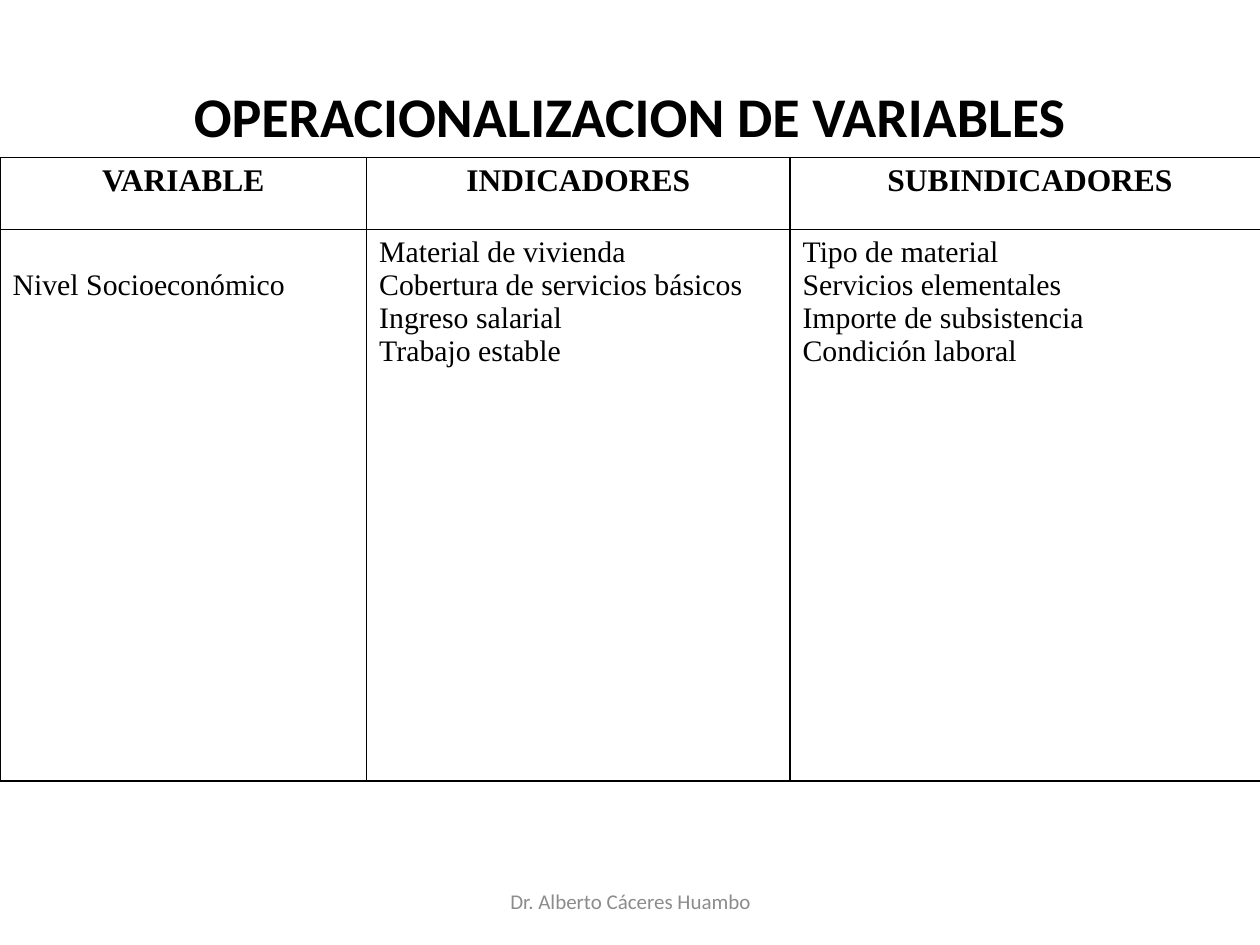
from lxml import etree
from pptx import Presentation
from pptx.dml.color import RGBColor
from pptx.enum import text
from pptx.oxml import ns
from pptx.util import Inches, Pt

BLACK = RGBColor(0, 0, 0)
GREY = RGBColor(0x8C, 0x8C, 0x8C)
SANS, SERIF = "Calibri", "Times New Roman"
CENTER, LEFT = text.PP_ALIGN.CENTER, text.PP_ALIGN.LEFT

HEADERS = ["VARIABLE", "INDICADORES", "SUBINDICADORES"]
COLUMNS = [
    ["Nivel Socioeconómico"],
    ["Material de vivienda", "Cobertura de servicios básicos",
     "Ingreso salarial", "Trabajo estable"],
    ["Tipo de material", "Servicios elementales",
     "Importe de subsistencia", "Condición laboral"],
]
COL_WIDTHS = [2.91, 3.36, 3.81]
ROW_HEIGHTS = [0.57, 4.38]
INDENTS = [0.38, 0.07, 0.38]
LINE_HEIGHT = 0.26


class SlideBuilder:
    def __init__(self, prs, layout):
        self.s = prs.slides.add_slide(prs.slide_layouts[layout])

    def fill_text(self, tf, lines, size, font, color=BLACK, bold=False,
                  align=CENTER, indent=0):
        tf.text = "\n".join(lines)
        for p in tf.paragraphs:
            p.alignment = align
            if indent:
                pPr = p._p.get_or_add_pPr()
                pPr.set("marL", str(Inches(indent)))
                pPr.set("indent", str(-Inches(indent)))
            for r in p.runs:
                r.font.size, r.font.name, r.font.bold = Pt(size), font, bold
                r.font.color.rgb = color

    def title(self, line, x, y, w, h):
        sp = self.s.shapes.title
        sp.left, sp.top, sp.width, sp.height = map(Inches, (x, y, w, h))
        sp.text_frame.vertical_anchor = text.MSO_ANCHOR.MIDDLE
        self.fill_text(sp.text_frame, [line], 32, SANS, bold=True)

    def footer(self, line, x, y, w, h):
        tf = self.s.shapes.add_textbox(*map(Inches, (x, y, w, h))).text_frame
        tf.word_wrap = True
        tf.vertical_anchor = text.MSO_ANCHOR.MIDDLE
        self.fill_text(tf, [line], 12, SANS, GREY)

    def border(self, cell):
        """Draw a thin black line on all four sides of an unfilled cell."""
        cell.fill.background()
        tcPr = cell._tc.get_or_add_tcPr()
        for i, side in enumerate(("lnL", "lnR", "lnT", "lnB")):
            ln = etree.Element(ns.qn(f"a:{side}"), w=str(Pt(1)))
            fill = etree.SubElement(ln, ns.qn("a:solidFill"))
            etree.SubElement(fill, ns.qn("a:srgbClr"), val=str(BLACK))
            tcPr.insert(i, ln)

    def table(self, x, y):
        size = sum(COL_WIDTHS), sum(ROW_HEIGHTS)
        table = self.s.shapes.add_table(
            len(ROW_HEIGHTS), len(COL_WIDTHS), *map(Inches, (x, y, *size))).table
        table.first_row = table.horz_banding = False
        for row, height in zip(table.rows, ROW_HEIGHTS):
            row.height = Inches(height)
        for i, (header, lines) in enumerate(zip(HEADERS, COLUMNS)):
            table.columns[i].width = Inches(COL_WIDTHS[i])
            head, body = table.cell(0, i), table.cell(1, i)
            self.fill_text(head.text_frame, [header], 18, SERIF, bold=True,
                           indent=0.38)
            self.fill_text(body.text_frame, lines, 17, SERIF, align=LEFT,
                           indent=INDENTS[i])
            self.border(head)
            self.border(body)
        # The variable name starts level with the second line of its neighbours.
        table.cell(1, 0).margin_top = Inches(0.05 + LINE_HEIGHT)


def main():
    prs = Presentation()
    prs.slide_width, prs.slide_height = Inches(10), Inches(7.5)
    b = SlideBuilder(prs, 5)
    b.footer("Dr. Alberto Cáceres Huambo", 3.42, 6.95, 3.17, 0.4)
    b.title("OPERACIONALIZACION DE VARIABLES", 0.5, 0.36, 9, 1.11)
    b.table(0, 1.25)
    prs.save("out.pptx")


if __name__ == "__main__":
    main()
